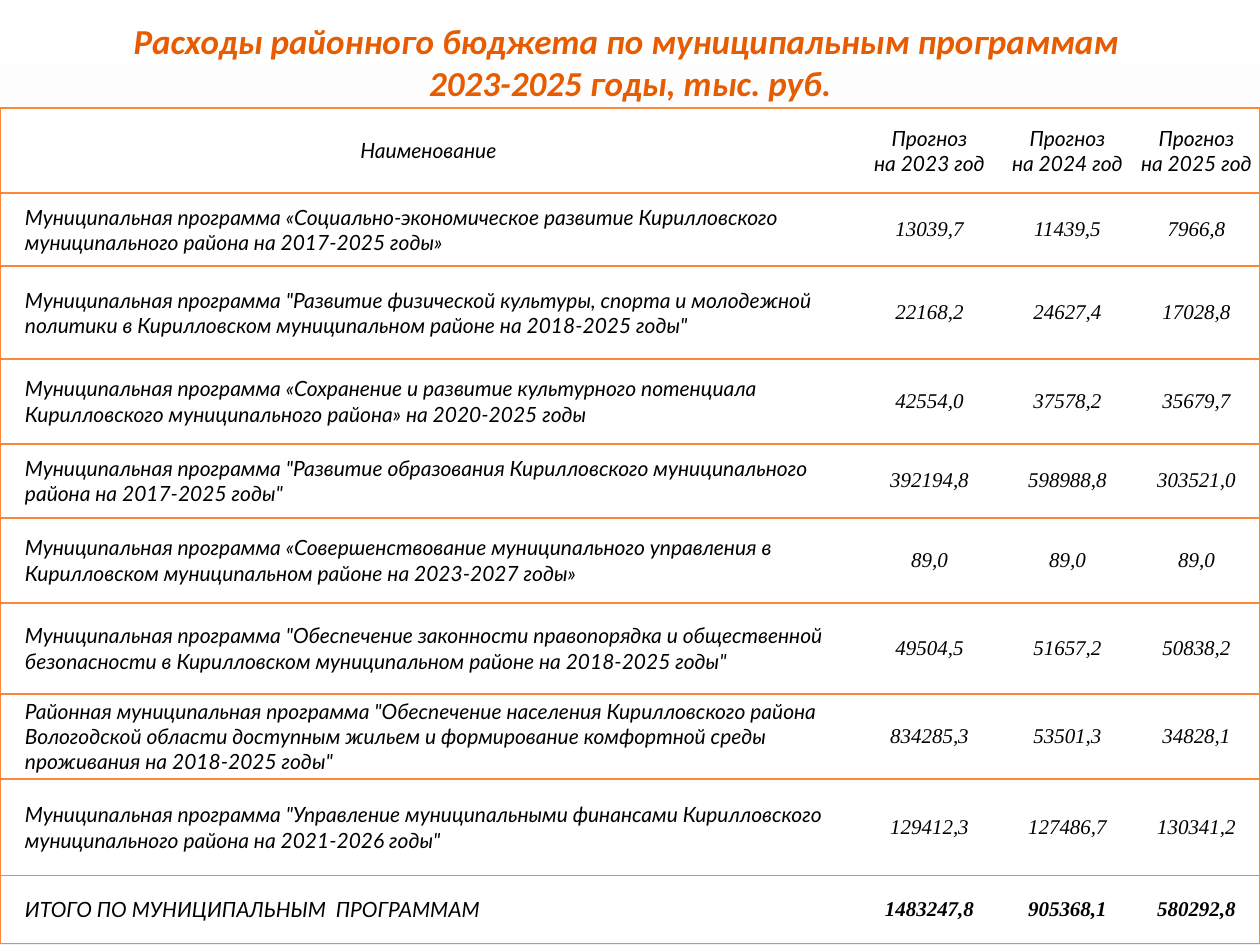
from pptx import Presentation
from pptx.dml.color import RGBColor
from pptx.enum.text import MSO_ANCHOR, PP_ALIGN
from pptx.oxml import parse_xml
from pptx.oxml.ns import nsdecls
from pptx.util import Pt

# Content
TITLE = "Расходы районного бюджета по муниципальным программам \v2023-2025 годы, тыс. руб."
HEAD = ["Наименование"] + [f"Прогноз\nна {year} год" for year in (2023, 2024, 2025)]
ROWS = [
    ("Муниципальная программа «Социально-экономическое развитие Кирилловского муниципального района на 2017-2025 годы»",
     "13039,7", "11439,5", "7966,8"),
    ('Муниципальная программа "Развитие физической культуры, спорта и молодежной политики в Кирилловском муниципальном районе на 2018-2025 годы"',
     "22168,2", "24627,4", "17028,8"),
    ("Муниципальная программа «Сохранение и развитие культурного потенциала Кирилловского муниципального района» на 2020-2025 годы",
     "42554,0", "37578,2", "35679,7"),
    ('Муниципальная программа "Развитие образования Кирилловского муниципального района на 2017-2025 годы"',
     "392194,8", "598988,8", "303521,0"),
    ("Муниципальная программа «Совершенствование муниципального управления в Кирилловском муниципальном районе на 2023-2027 годы»",
     "89,0", "89,0", "89,0"),
    ('Муниципальная программа "Обеспечение законности правопорядка и общественной безопасности в Кирилловском муниципальном районе на 2018-2025 годы"',
     "49504,5", "51657,2", "50838,2"),
    ('Районная муниципальная программа "Обеспечение населения Кирилловского района Вологодской области доступным жильем и формирование комфортной среды проживания на 2018-2025 годы"',
     "834285,3", "53501,3", "34828,1"),
    ('Муниципальная программа "Управление муниципальными финансами Кирилловского муниципального района на 2021-2026 годы"',
     "129412,3", "127486,7", "130341,2"),
    ("ИТОГО ПО МУНИЦИПАЛЬНЫМ  ПРОГРАММАМ", "1483247,8", "905368,1", "580292,8"),
]

# Sizes in px, 126 to the inch
PX = 914400 / 126
WIDE, HIGH = 1260, 945
COLS = [857, 145, 131, 127]
TALL = [85, 73, 93, 85, 74, 85, 91, 85, 97, 68]
TOP = 108
INDENT = 25
COLOR = {"title": "E75C01", "line": "FE8637", "text": "000000", "cell": "FFFFFF"}
STOPS = [(0, "FFFFFF"), (53, "EFF1F7"), (83, "D9D9D9"), (100, "F2F2F2")]
PLAIN = "{2D5ABB26-0587-4C30-8999-92F81FD0307C}"


def emu(px):
    return round(px * PX)


def style(font, color, **form):
    for key, val in form.items():
        setattr(font, key, val)
    font.color.rgb = RGBColor.from_string(COLOR[color])


def strip(frame):
    for side in ("left", "right", "top", "bottom"):
        setattr(frame, f"margin_{side}", 0)


def edge(cell, sides):
    for side in sides:
        cell._tc.get_or_add_tcPr().append(parse_xml(
            f'<a:ln{side} {nsdecls("a")} w="12700"><a:solidFill>'
            f'<a:srgbClr val="{COLOR["line"]}"/></a:solidFill></a:ln{side}>'))


deck = Presentation()
deck.slide_width, deck.slide_height = emu(WIDE), emu(HIGH)
slide = deck.slides.add_slide(deck.slide_layouts[5])

# Background gradient, top to bottom
stops = "".join(f'<a:gs pos="{pos * 1000}"><a:srgbClr val="{tone}"/></a:gs>' for pos, tone in STOPS)
slide.element.cSld.insert(0, parse_xml(
    f'<p:bg {nsdecls("p", "a")}><p:bgPr><a:gradFill rotWithShape="1"><a:gsLst>{stops}</a:gsLst>'
    '<a:lin ang="5400000" scaled="0"/></a:gradFill><a:effectLst/></p:bgPr></p:bg>'))

# Title
title = slide.shapes.title
title.left, title.top, title.width, title.height = map(emu, (20, 22, 1221, 79))
frame = title.text_frame
frame.text = TITLE
frame.word_wrap = True
frame.vertical_anchor = MSO_ANCHOR.MIDDLE
strip(frame)
para = frame.paragraphs[0]
para.alignment = PP_ALIGN.CENTER
for run in para.runs:
    style(run.font, "title", name="Calibri", size=Pt(20), bold=True, italic=True)

# Table grid
data = [HEAD] + ROWS
last = len(data) - 1
end = len(COLS) - 1
table = slide.shapes.add_table(
    len(data), len(COLS), 0, emu(TOP), emu(sum(COLS)), emu(sum(TALL))).table
table.first_row = table.horz_banding = False
table._tbl.tblPr.find("{*}tableStyleId").text = PLAIN
for col, width in zip(table.columns, COLS):
    col.width = emu(width)
for row, height in zip(table.rows, TALL):
    row.height = emu(height)

# Table cells
for r, line in enumerate(data):
    for c, text in enumerate(line):
        cell = table.cell(r, c)
        cell.text = text
        cell.vertical_anchor = MSO_ANCHOR.MIDDLE
        strip(cell)
        edge(cell, ("L" if c == 0 else "") + ("R" if c == end else "") + "TB")
        cell.fill.solid()
        cell.fill.fore_color.rgb = RGBColor.from_string(COLOR["cell"])
        label = r == 0 or c == 0
        for para in cell.text_frame.paragraphs:
            if r and c == 0:
                para.alignment = PP_ALIGN.LEFT
                cell.margin_left = emu(INDENT)
            else:
                para.alignment = PP_ALIGN.CENTER
            for run in para.runs:
                style(run.font, "text", name="Lato" if label else "Times New Roman",
                      size=Pt(12), italic=True, bold=r == last and c > 0)

deck.save("out.pptx")
